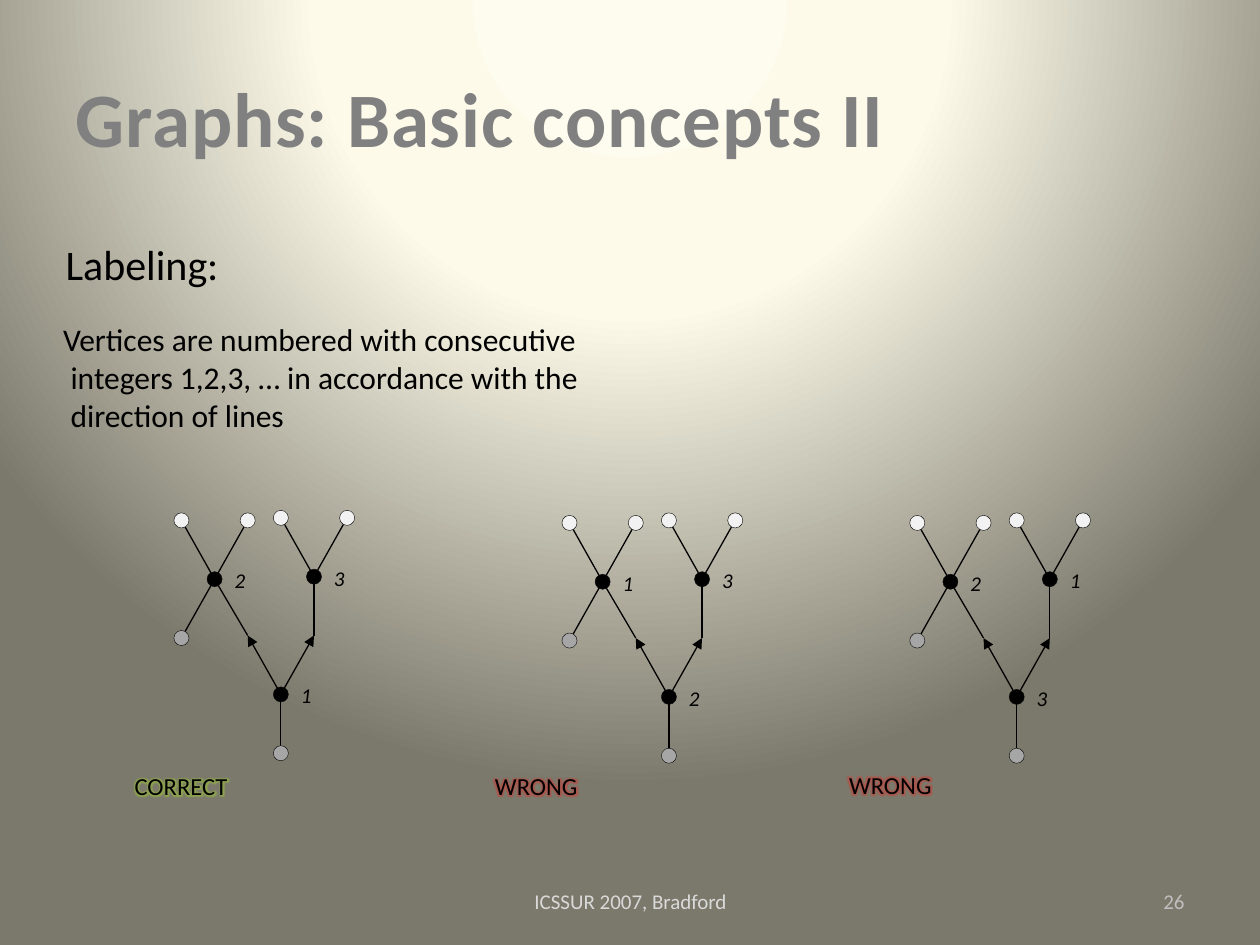
from dataclasses import dataclass

from lxml.etree import SubElement
from pptx import Presentation
from pptx.dml.color import RGBColor
from pptx.enum.shapes import MSO_CONNECTOR, MSO_SHAPE
from pptx.enum.text import MSO_ANCHOR, PP_ALIGN
from pptx.oxml import parse_xml
from pptx.oxml.ns import nsdecls, qn
from pptx.util import Inches, Pt


@dataclass(frozen=True)
class Theme:
    font: str = "Calibri"
    ink: str = "000000"
    title: str = "808080"
    foot: str = "D9D9D9"
    page: str = "BFBFBF"
    rim: str = "0D0D0D"
    leaf: str = "F2F2F2"
    root: str = "A6A6A6"
    good: str = "A3D42E"
    bad: str = "E1302C"
    stops: tuple = ((0, "FEFCEE"), (40, "FDFAEA"), (100, "7B796B"))
    head: int = 44
    lead: int = 24
    body: int = 18
    tag: int = 14
    small: int = 12


def put(frame, text, size, color, bold=False, italic=False, align=PP_ALIGN.LEFT,
        anchor=MSO_ANCHOR.MIDDLE, font="Calibri", space=0, glow=None):
    """Fill a text frame, one paragraph per line of text."""
    frame.word_wrap = True
    frame.vertical_anchor = anchor
    for i, line in enumerate(text.split("\n")):
        par = frame.paragraphs[0] if i == 0 else frame.add_paragraph()
        par.alignment = align
        par.space_before = Pt(0)
        run = par.add_run()
        run.text = line
        face = run.font
        face.size, face.name = Pt(size), font
        face.bold, face.italic = bold, italic
        face.color.rgb = RGBColor.from_string(color)
        props = run._r.get_or_add_rPr()
        if space:
            props.set("spc", str(space))
        if glow:
            props.find(qn("a:solidFill")).addnext(parse_xml(
                f'<a:effectLst {nsdecls("a")}><a:glow rad="63500"><a:srgbClr val="{glow}">'
                '<a:alpha val="45000"/></a:srgbClr></a:glow></a:effectLst>'))


class Page:
    """One slide on a grid of 100 columns by 75 rows."""

    def __init__(self, deck, theme):
        self.look = theme
        self.slide = deck.slides.add_slide(deck.slide_layouts[1])
        self.unit = deck.slide_width / 100

    def at(self, *cells):
        return [round(c * self.unit) for c in cells]

    def back(self):
        self.slide.background.fill.solid()
        stops = "".join(f'<a:gs pos="{p * 1000}"><a:srgbClr val="{c}"/></a:gs>'
                        for p, c in self.look.stops)
        old = self.slide.element.find(".//" + qn("p:bgPr"))[0]
        old.getparent().replace(old, parse_xml(
            f'<a:gradFill {nsdecls("a")} rotWithShape="1"><a:gsLst>{stops}</a:gsLst>'
            '<a:path path="circle"><a:fillToRect l="50000" t="-80000" r="50000" b="180000"/>'
            '</a:path></a:gradFill>'))

    def holder(self, index, box, text, size, color, **style):
        shape = self.slide.placeholders[index]
        shape.left, shape.top, shape.width, shape.height = self.at(*box)
        put(shape.text_frame, text, size, color, font=self.look.font, **style)
        return shape

    def text(self, box, text, size, color, **style):
        shape = self.slide.shapes.add_textbox(*self.at(*box))
        put(shape.text_frame, text, size, color, font=self.look.font, **style)
        return shape

    def line(self, start, end, arrow=False):
        link = self.slide.shapes.add_connector(
            MSO_CONNECTOR.STRAIGHT, *self.at(*start, *end))
        link.line.color.rgb = RGBColor.from_string(self.look.ink)
        link.line.width = Pt(0.75)
        if arrow:
            SubElement(link.line._get_or_add_ln(), qn("a:tailEnd"), type="triangle")
        SubElement(link._element.spPr, qn("a:effectLst"))

    def dot(self, spot, color, size=1.2):
        x, y = spot
        shape = self.slide.shapes.add_shape(
            MSO_SHAPE.OVAL, *self.at(x - size / 2, y - size / 2, size, size))
        shape.shadow.inherit = False
        shape.fill.solid()
        shape.fill.fore_color.rgb = RGBColor.from_string(color)
        shape.line.color.rgb = RGBColor.from_string(self.look.rim)
        shape.line.width = Pt(0.25)

    def graph(self, left, top, labels):
        """Draw two joined trees; labels go to the left, right and low vertex."""
        look = self.look

        def spot(col, row, drop=0):
            return left + col * 2.63, top + row * 4.67 + drop

        west, east, low = spot(1, 1, 0.2), spot(4, 1), spot(3, 3)
        leaves = [spot(0, 0, 0.2), spot(2, 0, 0.2), spot(3, 0), spot(5, 0)]
        roots = [spot(0, 2, 0.2), spot(3, 4)]
        bends = [spot(2, 2), spot(4, 2)]
        for i, leaf in enumerate(leaves):
            self.line(west if i < 2 else east, leaf)
        for root, node in zip(roots, (west, low)):
            self.line(root, node)
        for bend, node in zip(bends, (west, east)):
            self.line(node, bend)
            self.line(low, bend, arrow=True)
        for spots, color in (((west, east, low), look.ink), (leaves, look.leaf),
                             (roots, look.root)):
            for place in spots:
                self.dot(place, color)
        for (x, y), label in zip((west, east, low), labels):
            self.text((x + 0.6, y - 1.4, 2.9, 3), label, look.small, look.ink,
                      italic=True, anchor=MSO_ANCHOR.TOP)


def main():
    deck = Presentation()
    deck.slide_width, deck.slide_height = Inches(10), Inches(7.5)
    look = Theme()
    page = Page(deck, look)
    page.back()
    page.holder(0, (5, 3, 90, 12.5), "Graphs: Basic concepts II", look.head,
                look.title, bold=True, space=50)
    body = page.holder(1, (4, 24.3, 44.9, 11.2),
                       "Vertices are numbered with consecutive\n"
                       "integers 1,2,3, … in accordance with the\n"
                       "direction of lines", look.body, look.ink)
    for i, par in enumerate(body.text_frame.paragraphs):
        props = par._p.get_or_add_pPr()
        props.set("marL", str(Inches(0.06) if i else 0))
        props.set("indent", "0")
        SubElement(props, qn("a:buNone"))
    lead = page.text((3.5, 17.5, 18.2, 6.8), "Labeling:", look.lead, look.ink)
    lead.text_frame.margin_left = Inches(0.17)

    graphs = ((14.4, 41.1, "231"), (45.2, 41.3, "132"), (72.8, 41.3, "213"))
    for left, top, labels in graphs:
        page.graph(left, top, labels)
    tags = ((9.7, 59.9, "CORRECT", look.good), (38.3, 59.9, "WRONG", look.bad),
            (66.4, 59.8, "WRONG", look.bad))
    for left, top, word, glow in tags:
        page.text((left, top, 10.5, 4.9), word, look.tag, look.ink, glow=glow)

    page.text((34.2, 69.5, 31.7, 4), "ICSSUR 2007, Bradford", look.small, look.foot,
              align=PP_ALIGN.CENTER)
    page.text((71.7, 69.5, 23.3, 4), "26", look.small, look.page, align=PP_ALIGN.RIGHT)
    deck.save("out.pptx")


if __name__ == "__main__":
    main()
